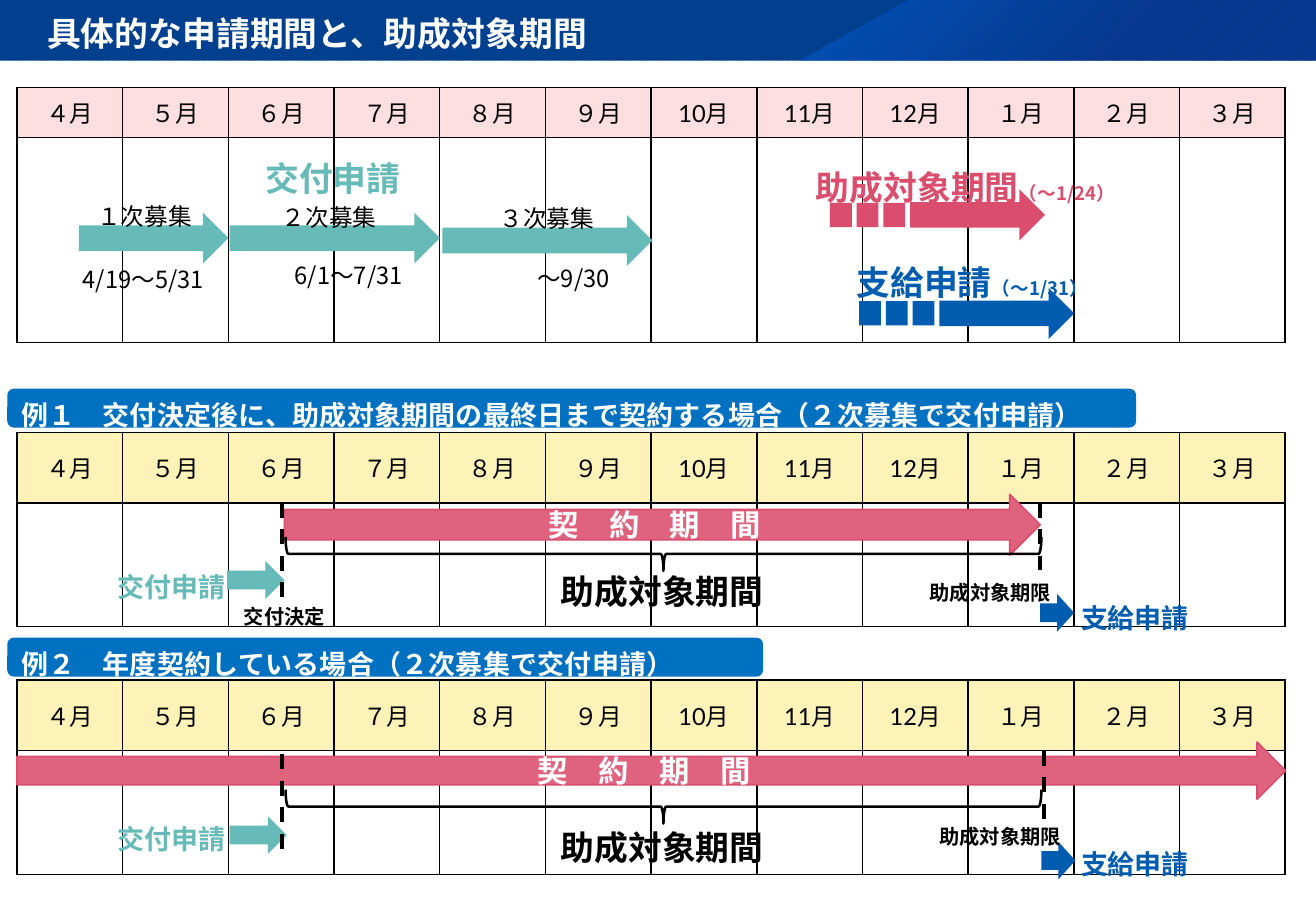
"""Build the slide of application periods and subsidised periods."""
import lxml.etree
import pptx
import pptx.dml.color
import pptx.enum.dml
import pptx.enum.shapes
import pptx.enum.text
import pptx.oxml
import pptx.oxml.ns
import pptx.util

Inches = pptx.util.Inches
RGB = pptx.dml.color.RGBColor.from_string
SHAPE = pptx.enum.shapes.MSO_SHAPE
ALIGN = pptx.enum.text.PP_ALIGN
MIDDLE = pptx.enum.text.MSO_ANCHOR.MIDDLE
qn = pptx.oxml.ns.qn

THEME = {
    "latin": "Lato", "asian": "Noto Sans CJK JP",
    "black": "000000", "white": "FFFFFF", "teal": "66BAB7", "blue": "005CAF",
    "red": "DB4D6D", "contract": "DF637E", "bar": "0070C0",
    "pink": "FEDFE1", "yellow": "FDF3B9",
    "banner": ("003579", "004292"), "glow": (("0064DF", 0, 50), ("0C338E", 0.62, 55)),
    "title": 20, "big": 20, "contract_size": 18, "head": 16, "body": 14, "small": 12, "note": 11,
}
MONTHS = ["４月", "５月", "６月", "７月", "８月", "９月", "10月", "11月", "12月", "１月", "２月", "３月"]


def write(frame, spans, color, bold=False, face="asian", align=ALIGN.CENTER, spacing=None, after=None, tracking=None):
    """Fill the first paragraph of a frame with (text, size) spans."""
    para = frame.paragraphs[0]
    for name, value in {"alignment": align, "line_spacing": spacing, "space_after": after}.items():
        setattr(para, name, value)
    for text, size in spans:
        span = para.add_run()
        span.text = text
        span.font.color.rgb = RGB(THEME[color])
        for name, value in {"size": pptx.util.Pt(THEME[size]), "bold": bold, "name": THEME[face]}.items():
            setattr(span.font, name, value)
        properties = span.font._element
        lxml.etree.SubElement(properties, qn("a:ea")).set("typeface", THEME["asian"])
        if tracking:
            properties.set("spc", tracking)


def draw(kind, box, fill=None, line=None, weight=1):
    """Add a preset shape with a plain fill and an optional outline."""
    shape = page.shapes.add_shape(kind, *map(Inches, box))
    shape.shadow.inherit = False
    for part, color in ((shape.fill, fill), (shape.line.fill, line)):
        if color:
            part.solid()
            part.fore_color.rgb = RGB(THEME[color])
        else:
            part.background()
    if line:
        shape.line.width = pptx.util.Pt(weight)
    return shape


deck = pptx.Presentation()
deck.slide_width, deck.slide_height = Inches(10.83), Inches(7.5)
page = deck.slides.add_slide(deck.slide_layouts[6])

banner = draw(SHAPE.RECTANGLE, (-0.01, 0, 10.84, 0.5))
banner.fill.patterned()
banner.fill.pattern = pptx.enum.dml.MSO_PATTERN.DARK_UPWARD_DIAGONAL
banner.fill.fore_color.rgb, banner.fill.back_color.rgb = map(RGB, THEME["banner"])

outline = page.shapes.build_freeform(Inches(7.48), 0)
outline.add_line_segments([(Inches(x), Inches(y)) for x, y in ((10.83, 0), (10.83, 0.5), (6.57, 0.5))])
glow = outline.convert_to_shape()
glow.shadow.inherit = False
glow.line.fill.background()
glow.fill.gradient()
for stop, (color, position, opacity) in zip(glow.fill.gradient_stops, THEME["glow"]):
    stop.color.rgb = RGB(color)
    stop.position = position
    lxml.etree.SubElement(stop._element[0], qn("a:alpha")).set("val", str(opacity * 1000))
gradient = glow._element.spPr.find(qn("a:gradFill"))
gradient.remove(gradient.find(qn("a:lin")))
circle = lxml.etree.SubElement(gradient, qn("a:path"))
circle.set("path", "circle")
lxml.etree.SubElement(circle, qn("a:fillToRect")).attrib.update({"r": "100000", "b": "100000"})

title = page.shapes.add_textbox(*map(Inches, (0.29, 0.06, 10.29, 0.44))).text_frame
title.word_wrap = True
write(title, [("具体的な申請期間と、助成対象期間", "title")], "white", True, align=ALIGN.LEFT)

for top, heights, color in ((0.72, (0.41, 1.69), "pink"), (3.56, (0.58, 1.02), "yellow"), (5.6, (0.58, 1.02), "yellow")):
    frame = page.shapes.add_table(2, 12, *map(Inches, (0.14, top, 10.44, sum(heights))))
    table = frame.table
    table.first_row = table.horz_banding = False
    for row, height in zip(table.rows, heights):
        row.height = Inches(height)
    for column in table.columns:
        column.width = Inches(0.87)
    for cell, month in zip(table.rows[0].cells, MONTHS):
        cell.fill.solid()
        cell.fill.fore_color.rgb = RGB(THEME[color])
        cell.vertical_anchor = MIDDLE
        write(cell.text_frame, [(month, "body")], "black", face="latin")
    for cell in table.rows[1].cells:
        cell.fill.background()
    for cell in table.iter_cells():
        for index, side in enumerate(("lnL", "lnR", "lnT", "lnB")):
            border = lxml.etree.Element(qn("a:" + side), w="12700")
            solid = lxml.etree.SubElement(border, qn("a:solidFill"))
            lxml.etree.SubElement(solid, qn("a:srgbClr")).set("val", THEME["black"])
            cell._tc.get_or_add_tcPr().insert(index, border)

for top, width, text in (
    (3.2, 9.29, "例１　交付決定後に、助成対象期間の最終日まで契約する場合（２次募集で交付申請）"),
    (5.25, 6.22, "例２　年度契約している場合（２次募集で交付申請）"),
):
    frame = draw(SHAPE.ROUNDED_RECTANGLE, (0.06, top, width, 0.32), "bar").text_frame
    margins = {"margin_left": 0.1, "margin_top": 0.07, "margin_right": 0.04, "margin_bottom": 0.04}
    for name, value in margins.items():
        setattr(frame, name, Inches(value))
    frame.vertical_anchor = MIDDLE
    write(frame, [(text, "head")], "white", True, align=ALIGN.LEFT, spacing=1.3,
          after=pptx.util.Pt(7.3), tracking="20")

for left, top, width, height, color in (
    (0.65, 1.75, 1.23, 0.42, "teal"), (1.89, 1.75, 1.73, 0.42, "teal"), (3.64, 1.77, 1.73, 0.42, "teal"),
    (7.49, 1.56, 1.11, 0.42, "red"), (7.73, 2.37, 1.11, 0.42, "blue"),
    (1.87, 4.62, 0.47, 0.31, "teal"), (8.56, 4.89, 0.28, 0.31, "blue"),
    (1.89, 6.72, 0.47, 0.31, "teal"), (8.57, 6.93, 0.28, 0.31, "blue"),
):
    draw(SHAPE.RIGHT_ARROW, (left, top, width, height), color)
    if width == 1.11:
        for step in (1, 2, 3):
            draw(SHAPE.RECTANGLE, (left - 0.22 * step, top + 0.11, 0.18, 0.2), color)

for box in ((2.34, 4.07, 6.22, 0.5), (0.14, 6.11, 10.44, 0.47)):
    frame = draw(SHAPE.RIGHT_ARROW, box, "contract", "red").text_frame
    frame.vertical_anchor = MIDDLE
    write(frame, [("契　約　期　間", "contract_size")], "white", True, "latin")

for top in (1.45, 3.53):
    draw(SHAPE.LEFT_BRACE, (5.32, top, 0.28, 6.22), line="black", weight=1.5).rotation = 270

for x, top, bottom in ((2.32, 4.14, 5), (8.56, 4.14, 4.69), (2.32, 6.21, 7.07), (8.59, 6.18, 6.82)):
    limit = page.shapes.add_connector(pptx.enum.shapes.MSO_CONNECTOR.STRAIGHT, *map(Inches, (x, top, x, bottom)))
    limit.line.color.rgb = RGB(THEME["black"])
    limit.line.width = pptx.util.Pt(2.25)
    limit.line.dash_style = pptx.enum.dml.MSO_LINE.DASH
    lxml.etree.SubElement(limit._element.spPr, qn("a:effectLst"))

for left, top, width, text, size, color, note in (
    (0.35, 2.06, 1.66, "4/19～5/31", "body", "black", ""),
    (2.04, 2.03, 1.66, "6/1～7/31", "body", "black", ""),
    (3.89, 2.05, 1.66, "～9/30", "body", "black", ""),
    (0.2, 1.54, 1.98, "１次募集", "body", "black", ""),
    (1.72, 1.55, 1.98, "２次募集", "body", "black", ""),
    (3.51, 1.56, 1.98, "３次募集", "body", "black", ""),
    (1.91, 1.15, 1.66, "交付申請", "big", "teal", ""),
    (6.21, 1.22, 3.47, "助成対象期間", "big", "red", "（～1/24）"),
    (6.84, 2.01, 2.32, "支給申請", "big", "blue", "（～1/31）"),
    (0.58, 4.57, 1.66, "交付申請", "head", "teal", ""),
    (8.51, 4.82, 1.66, "支給申請", "head", "blue", ""),
    (4.46, 4.55, 1.98, "助成対象期間", "big", "black", ""),
    (1.35, 4.87, 1.98, "交付決定", "small", "black", ""),
    (7.16, 4.67, 1.98, "助成対象期限", "small", "black", ""),
    (0.58, 6.64, 1.66, "交付申請", "head", "teal", ""),
    (8.51, 6.85, 1.66, "支給申請", "head", "blue", ""),
    (4.46, 6.66, 1.98, "助成対象期間", "big", "black", ""),
    (7.24, 6.68, 1.98, "助成対象期限", "small", "black", ""),
):
    height = 0.1 + 0.02 * THEME[size]
    frame = page.shapes.add_textbox(*map(Inches, (left, top, width, height))).text_frame
    layout = {"word_wrap": True, "auto_size": pptx.enum.text.MSO_AUTO_SIZE.SHAPE_TO_FIT_TEXT,
              "margin_left": Inches(0.09), "margin_right": Inches(0.09)}
    for name, value in layout.items():
        setattr(frame, name, value)
    spans = [(text, size)] + ([(note, "note")] if note else [])
    write(frame, spans, color, size != "body", spacing=1.3)

deck.save("out.pptx")
